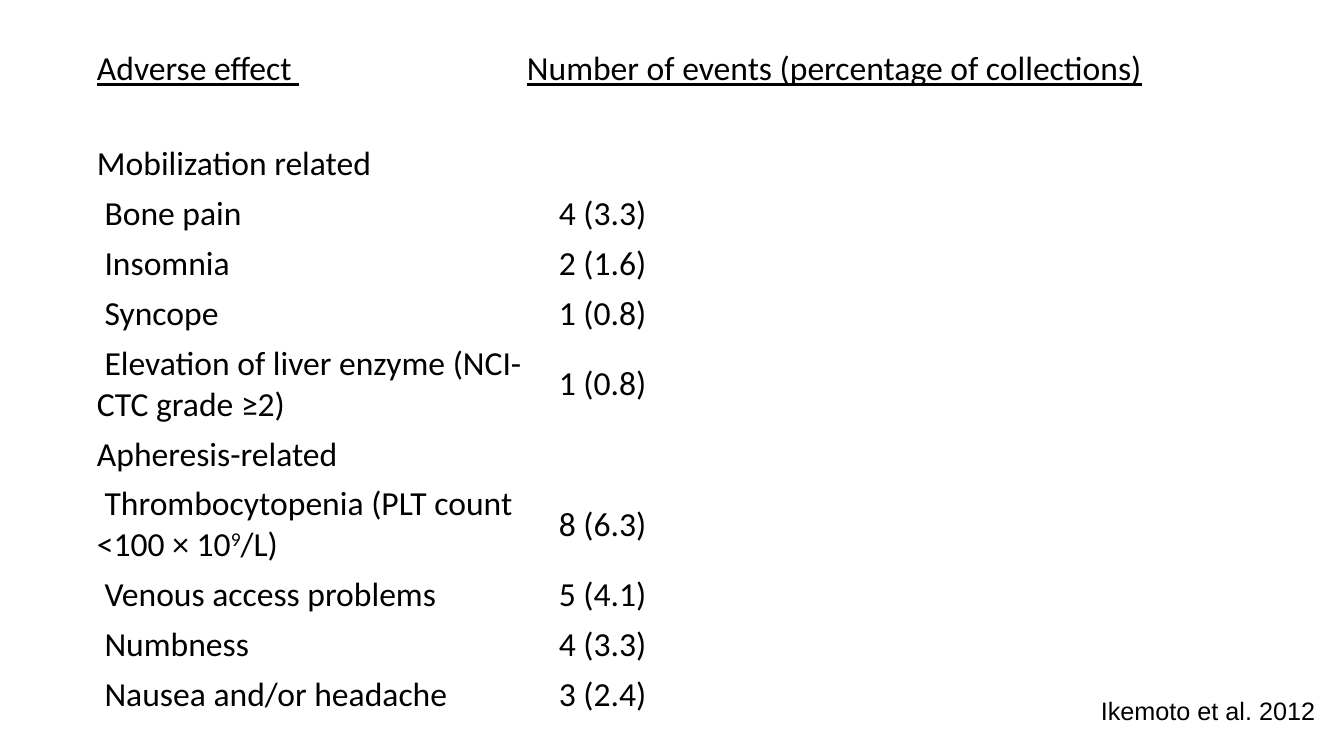
from dataclasses import dataclass

from lxml import etree
from pptx import Presentation
from pptx.dml.color import RGBColor
from pptx.enum.text import MSO_ANCHOR, MSO_AUTO_SIZE
from pptx.oxml.ns import qn
from pptx.util import Emu, Pt

MIDDLE = MSO_ANCHOR.MIDDLE
TOP = MSO_ANCHOR.TOP
FIT_SHAPE = MSO_AUTO_SIZE.SHAPE_TO_FIT_TEXT
EMU_PER_PX = 914400 / 100.8


@dataclass(frozen=True)
class Theme:
    ink: RGBColor = RGBColor(0, 0, 0)
    table_font: str = "Calibri"
    table_size: int = 24
    citation_font: str = "Arial"
    citation_size: int = 18


@dataclass(frozen=True)
class Effect:
    name: str
    events: str = ""
    height: int = 50
    superscript: str = ""
    tail: str = ""


THEME = Theme()
EFFECTS = [
    Effect("Mobilization related"),
    Effect(" Bone pain", "4 (3.3)"),
    Effect(" Insomnia", "2 (1.6)"),
    Effect(" Syncope", "1 (0.8)"),
    Effect(" Elevation of liver enzyme (NCI-CTC grade ≥2)", "1 (0.8)", 91),
    Effect("Apheresis-related"),
    Effect(" Thrombocytopenia (PLT count <100 × 10", "8 (6.3)", 90, "9", "/L)"),
    Effect(" Venous access problems", "5 (4.1)"),
    Effect(" Numbness", "4 (3.3)"),
    Effect(" Nausea and/or headache", "3 (2.4)"),
]
TABLE_LEFT, TABLE_TOP = 88, -73
COLUMN_WIDTHS = [440, 18, 662]
LEAD_HEIGHT, HEADING_HEIGHT = 112, 100
EVENTS_TAB = 430


def px(length: int) -> Emu:
    return Emu(round(length * EMU_PER_PX))


def add_run(paragraph, text: str, font_name: str, size: int,
            underline: bool = False, raised: bool = False) -> None:
    run = paragraph.add_run()
    run.text = text
    run.font.color.rgb = THEME.ink
    formats = {"name": font_name, "size": Pt(size), "underline": underline}
    for attribute, value in formats.items():
        setattr(run.font, attribute, value)
    if raised:
        run._r.get_or_add_rPr().set("baseline", "30000")


def write_cell(cell, text: str, underline: bool = False, raised: bool = False) -> None:
    if text:
        add_run(cell.text_frame.paragraphs[0], text, THEME.table_font,
                THEME.table_size, underline, raised)


def format_cell(cell, top: int = 4, anchor=MIDDLE) -> None:
    cell.fill.background()
    formats = {
        "margin_left": px(9), "margin_right": px(9),
        "margin_top": px(top), "margin_bottom": px(4),
        "vertical_anchor": anchor,
    }
    for attribute, value in formats.items():
        setattr(cell, attribute, value)


def add_tab_stop(paragraph, position: int) -> None:
    stops = etree.SubElement(paragraph._p.get_or_add_pPr(), qn("a:tabLst"))
    etree.SubElement(stops, qn("a:tab"), pos=str(px(position)), algn="l")


def write_heading(cell) -> None:
    format_cell(cell, top=10, anchor=TOP)
    add_tab_stop(cell.text_frame.paragraphs[0], EVENTS_TAB)
    write_cell(cell, "Adverse effect ", underline=True)
    write_cell(cell, "\t")
    write_cell(cell, "Number of events (percentage of collections)", underline=True)


def add_effects_table(slide) -> None:
    heights = [LEAD_HEIGHT, HEADING_HEIGHT] + [effect.height for effect in EFFECTS]
    table = slide.shapes.add_table(
        len(heights), len(COLUMN_WIDTHS), px(TABLE_LEFT), px(TABLE_TOP),
        px(sum(COLUMN_WIDTHS)), px(sum(heights))).table
    table.first_row = False
    table.horz_banding = False
    for column, width in zip(table.columns, COLUMN_WIDTHS):
        column.width = px(width)
    for row, height in zip(table.rows, heights):
        row.height = px(height)
    for cell in table.iter_cells():
        format_cell(cell)

    table.cell(0, 1).merge(table.cell(0, 2))
    heading = table.cell(1, 0)
    heading.merge(table.cell(1, 2))
    write_heading(heading)

    for index, effect in enumerate(EFFECTS, start=2):
        effect_cell = table.cell(index, 0)
        effect_cell.merge(table.cell(index, 1))
        write_cell(effect_cell, effect.name)
        write_cell(effect_cell, effect.superscript, raised=True)
        write_cell(effect_cell, effect.tail)
        write_cell(table.cell(index, 2), effect.events)


def add_citation(slide) -> None:
    frame = slide.shapes.add_textbox(px(1091), px(690), px(235), px(40)).text_frame
    for attribute, value in {"word_wrap": False, "auto_size": FIT_SHAPE}.items():
        setattr(frame, attribute, value)
    add_run(frame.paragraphs[0], "Ikemoto et al. 2012",
            THEME.citation_font, THEME.citation_size)


def main() -> None:
    presentation = Presentation()
    presentation.slide_width = px(1344)
    presentation.slide_height = px(756)
    slide = presentation.slides.add_slide(presentation.slide_layouts[6])
    add_effects_table(slide)
    add_citation(slide)
    presentation.save("out.pptx")


if __name__ == "__main__":
    main()
